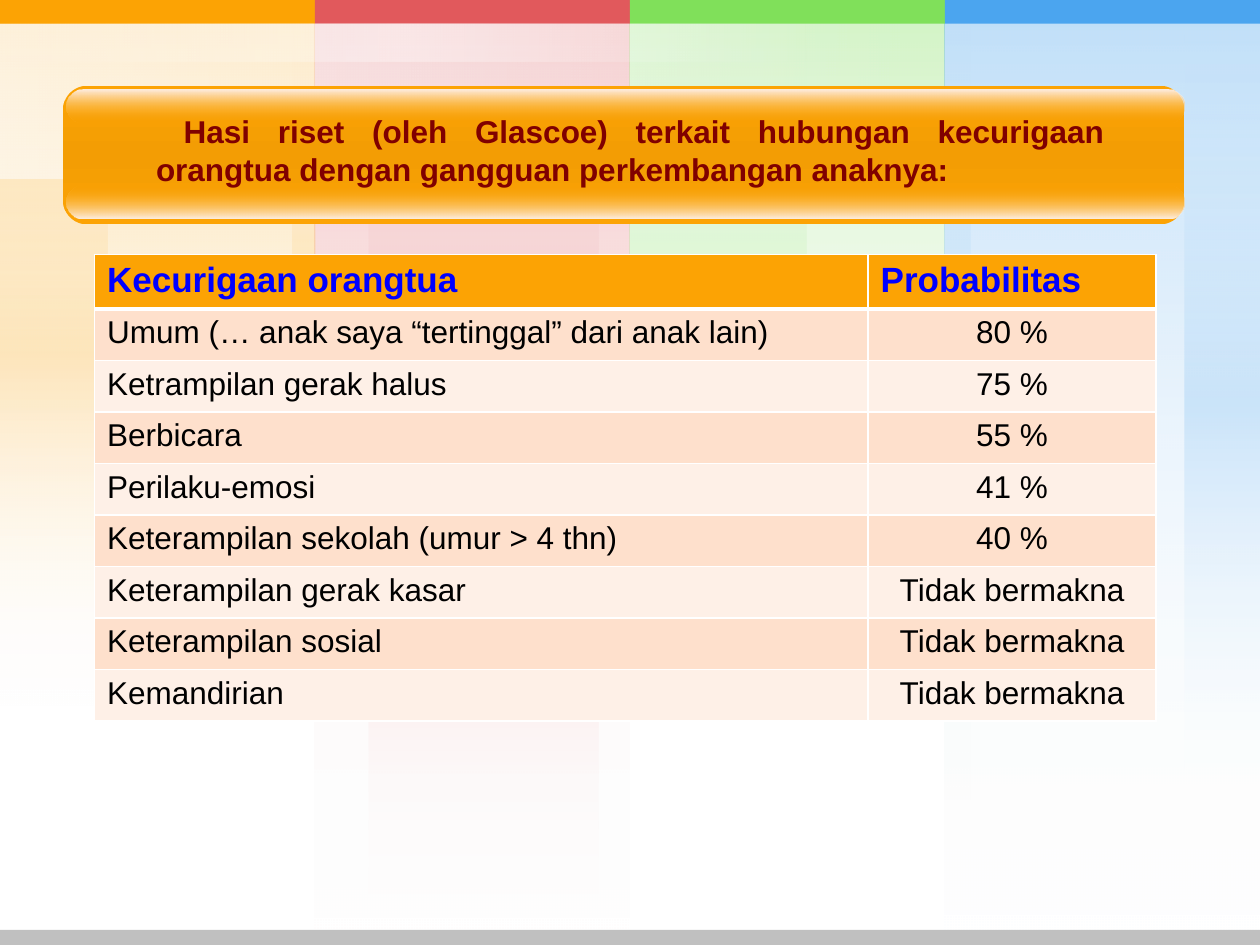
from pptx import Presentation
from pptx.dml.color import RGBColor
from pptx.enum.shapes import MSO_SHAPE
from pptx.enum.text import MSO_AUTO_SIZE, PP_ALIGN
from pptx.oxml import parse_xml
from pptx.oxml.ns import nsdecls, qn
from pptx.util import Inches, Pt

ORANGE = RGBColor(0xFC, 0xA3, 0x04)
DEEP_ORANGE = RGBColor(0xF3, 0x9D, 0x04)
RED = RGBColor(0xE1, 0x59, 0x5C)
GREEN = RGBColor(0x80, 0xE0, 0x5A)
BLUE = RGBColor(0x4B, 0xA5, 0xEF)
WHITE = RGBColor(0xFF, 0xFF, 0xFF)
GREY = RGBColor(0xC0, 0xC0, 0xC0)
GLOSS = RGBColor(0xFE, 0xEE, 0xE4)
PALE = RGBColor(0xFE, 0xF0, 0xE7)
PEACH = RGBColor(0xFE, 0xE0, 0xCC)
MAROON = RGBColor(0x80, 0x00, 0x00)
HEADER_BLUE = RGBColor(0x00, 0x00, 0xFF)
BLACK = RGBColor(0x00, 0x00, 0x00)

prs = Presentation()
prs.slide_width = Inches(10)
prs.slide_height = Inches(7.5)
COL = prs.slide_width / 4
ROW = prs.slide_height / 40
s = prs.slides.add_slide(prs.slide_layouts[6])


def add_block(x, y, w, h, fill, kind=MSO_SHAPE.RECTANGLE):
    sp = s.shapes.add_shape(kind, round(x * COL), round(y * ROW), round(w * COL), round(h * ROW))
    sp.shadow.inherit = False
    sp.line.fill.background()
    if isinstance(fill, RGBColor):
        sp.fill.solid()
        sp.fill.fore_color.rgb = fill
        return sp
    sp.fill.background()
    stops = "".join(
        f'<a:gs pos="{pos * 1000}"><a:srgbClr val="{color}">'
        f'<a:alpha val="{opacity * 1000}"/></a:srgbClr></a:gs>'
        for pos, color, opacity in fill)
    grad = parse_xml(f'<a:gradFill {nsdecls("a")} rotWithShape="1"><a:gsLst>{stops}</a:gsLst>'
                     '<a:lin ang="5400000" scaled="0"/></a:gradFill>')
    spPr = sp._element.spPr
    spPr.replace(spPr.find(qn("a:noFill")), grad)
    return sp


def style_text(tf, size, color, bold, align):
    p = tf.paragraphs[0]
    p.alignment = align
    font = p.runs[0].font
    font.name = "Arial"
    font.size = Pt(size)
    font.bold = bold
    font.color.rgb = color


panels = [
    (RED, [("fade", 1, 1, 40), ("glow", 1.17, 0.73, 40), ("fade", 1, 1, 40)]),
    (GREEN, [("fade", 2, 1, 30), ("glow", 2, 0.56, 30), ("fade", 2, 1, 30)]),
    (BLUE, [("glow", 3, 0.08, 34), ("fade", 3, 1, 39.84),
            ("glow", 3.76, 0.24, 34), ("fade", 3, 1, 39.84)]),
    (ORANGE, [("fade", 0, 1, 30), ("glow", 0.93, 0.07, 30),
              ("glow", 0, 0.34, 30), ("fade", 0, 1, 30)]),
]
for color, layers in panels:
    gradients = {
        "fade": [(0, color, 20), (100, WHITE, 0)],
        "glow": [(0, WHITE, 0), (50, color, 20), (100, WHITE, 0)],
    }
    for style, x, w, h in layers:
        add_block(x, 0, w, h, gradients[style])

for i, color in enumerate([ORANGE, RED, GREEN, BLUE]):
    add_block(i, 0, 1, 1, color)

white_fade = [(0, WHITE, 35), (100, WHITE, 0)]
white_glow = [(0, WHITE, 0), (50, WHITE, 35), (100, WHITE, 0)]
sheen = (1.26, -15.73, 0.49, 40.05, white_fade)
for beam in [(1.66, -15.2, 0.04, 44.91, white_glow), sheen,
             (1.22, -15.31, 0.12, 34.19, white_glow), sheen]:
    add_block(*beam).rotation = 270

add_block(0, 39.36, 4, 0.64, GREY)

banner = [
    (0.2, 3.63, 3.56, 5.87, 0.175,
     [(0, ORANGE, 100), (50, DEEP_ORANGE, 100), (100, ORANGE, 100)]),
    (0.21, 7.84, 3.55, 1.39, 0.5, [(0, ORANGE, 0), (100, PALE, 100)]),
    (0.21, 3.79, 3.55, 1.39, 0.5, [(0, GLOSS, 100), (100, ORANGE, 0)]),
]
for x, y, w, h, corner, fill in banner:
    sp = add_block(x, y, w, h, fill, MSO_SHAPE.ROUNDED_RECTANGLE)
    sp.adjustments[0] = corner

title = s.shapes.add_textbox(round(0.456 * COL), round(4.48 * ROW), round(3.09 * COL), round(6.19 * ROW))
tf = title.text_frame
tf.word_wrap = True
tf.auto_size = MSO_AUTO_SIZE.SHAPE_TO_FIT_TEXT
tf.text = (" Hasi riset (oleh Glascoe) terkait hubungan kecurigaan orangtua "
           "dengan gangguan perkembangan anaknya:")
style_text(tf, 18, MAROON, True, PP_ALIGN.JUSTIFY)

rows = [
    ("Kecurigaan orangtua", "Probabilitas"),
    ("Umum (… anak saya “tertinggal” dari anak lain)", "80 %"),
    ("Ketrampilan gerak halus", "75 %"),
    ("Berbicara", "55 %"),
    ("Perilaku-emosi", "41 %"),
    ("Keterampilan sekolah (umur > 4 thn)", "40 %"),
    ("Keterampilan gerak kasar", "Tidak bermakna"),
    ("Keterampilan sosial", "Tidak bermakna"),
    ("Kemandirian", "Tidak bermakna"),
]
table = s.shapes.add_table(len(rows), 2, round(0.3 * COL), round(10.77 * ROW),
                           round(3.37 * COL), round(19.63 * ROW)).table
for column, share in zip(table.columns, (2.456, 0.914)):
    column.width = round(share * COL)

for i, texts in enumerate(rows):
    for j, text in enumerate(texts):
        cell = table.cell(i, j)
        cell.text_frame.text = text
        cell.fill.solid()
        if i == 0:
            cell.fill.fore_color.rgb = ORANGE
            style_text(cell.text_frame, 20, HEADER_BLUE, True, PP_ALIGN.LEFT)
        else:
            cell.fill.fore_color.rgb = PEACH if i % 2 else PALE
            style_text(cell.text_frame, 18, BLACK, False, PP_ALIGN.CENTER if j else PP_ALIGN.LEFT)
        widths = {"lnL": 1, "lnR": 1, "lnT": 3 if i == 1 else 1, "lnB": 3 if i == 0 else 1}
        tcPr = cell._tc.get_or_add_tcPr()
        for k, (side, width) in enumerate(widths.items()):
            tcPr.insert(k, parse_xml(
                f'<a:{side} {nsdecls("a")} w="{Pt(width)}"><a:solidFill>'
                f'<a:srgbClr val="{WHITE}"/></a:solidFill></a:{side}>'))

prs.save("out.pptx")
